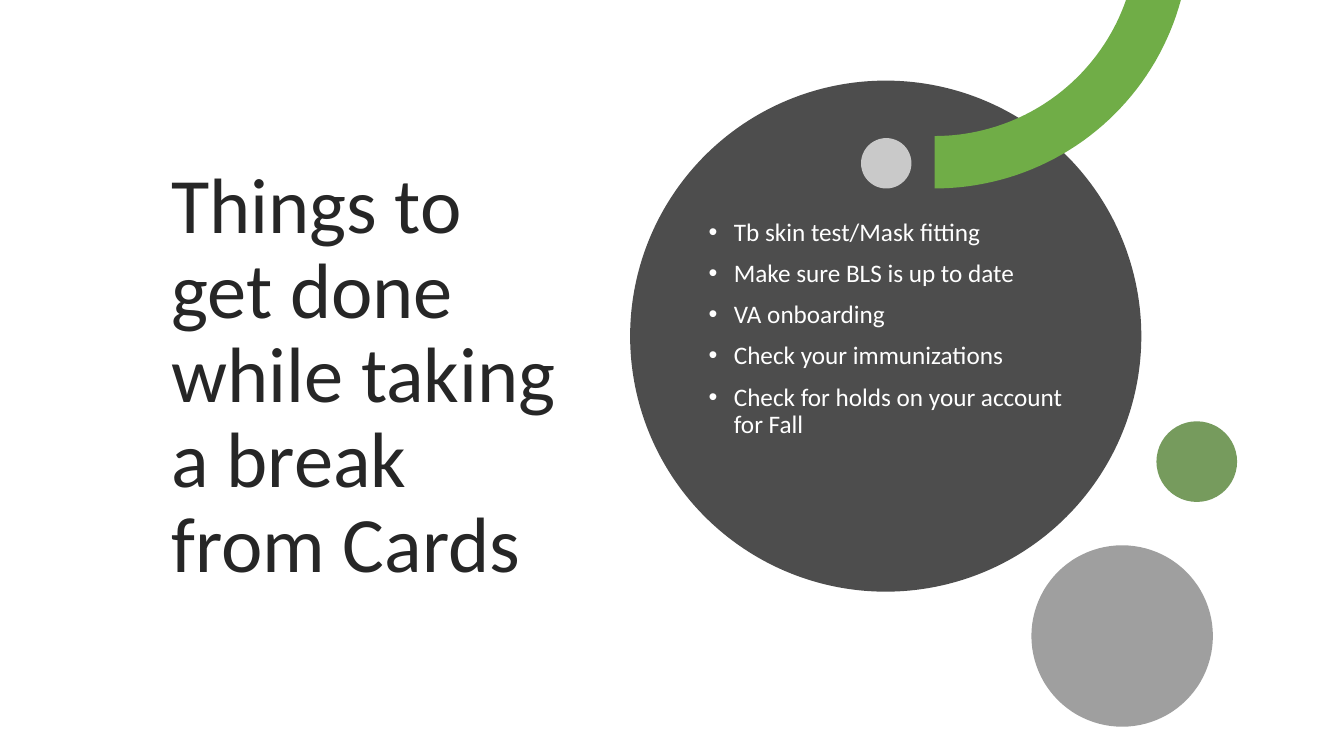
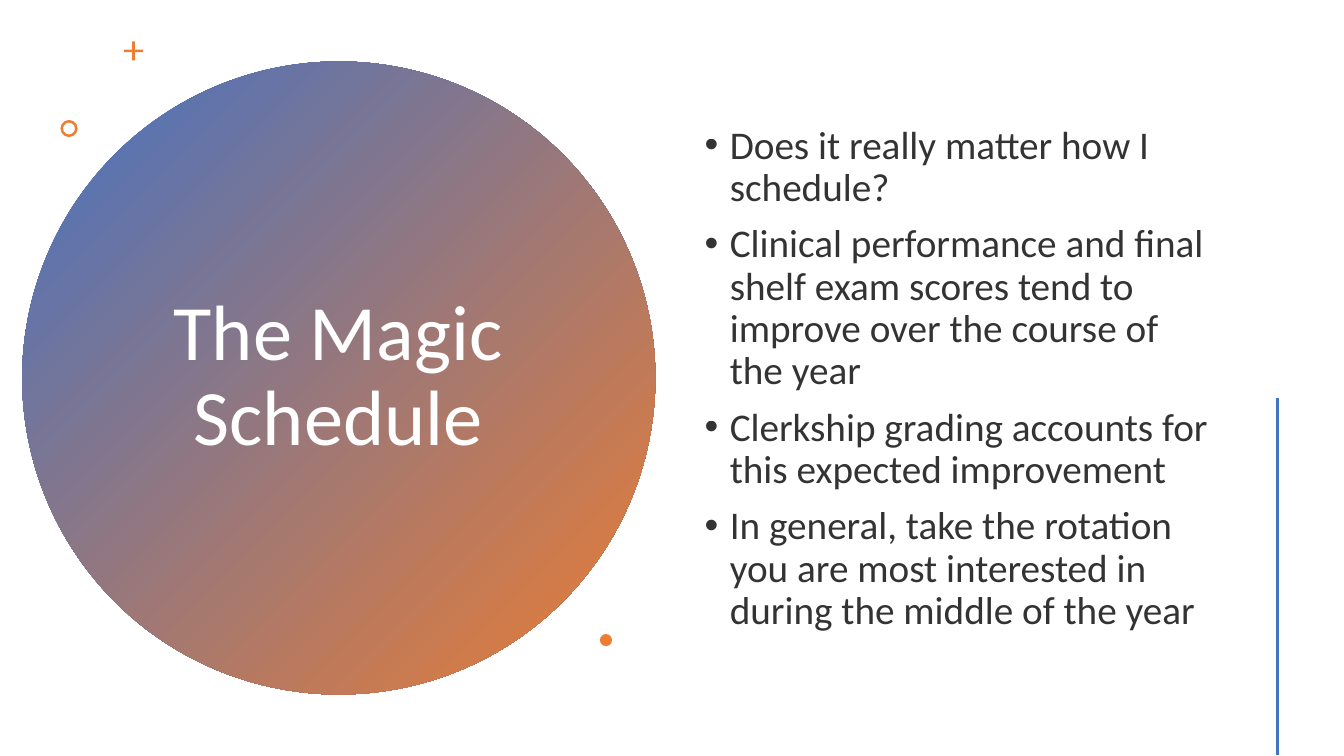
from math import asin, cos, pi, sin

from lxml.etree import SubElement
from pptx import Presentation
from pptx.dml.color import RGBColor
from pptx.enum.shapes import MSO_CONNECTOR as Link, MSO_SHAPE as Form
from pptx.enum.text import MSO_ANCHOR as Anchor, PP_ALIGN as Align
from pptx.oxml.ns import qn
from pptx.util import Inches, Pt

FONT = "Calibri"
WHITE, INK, BLACK = "FFFFFF", "262626", "000000"
DARK, GREY = "4D4D4D", "404040"
GREEN, MOSS = "70AD47", "548235"
BLUE, ORANGE = "4472C4", "ED7D31"

TASKS = [
    "Tb skin test/Mask fitting",
    "Make sure BLS is up to date",
    "VA onboarding",
    "Check your immunizations",
    "Check for holds on your account for Fall",
]
POINTS = [
    "Does it really matter how I schedule?",
    "Clinical performance and final shelf exam scores tend to improve over "
    "the course of the year",
    "Clerkship grading accounts for this expected improvement",
    "In general, take the rotation you are most interested in during the "
    "middle of the year",
]


def tint(fill, color, alpha=100):
    """Set a solid fill from a hex string, with opacity in percent."""
    fill.solid()
    fill.fore_color.rgb = RGBColor.from_string(color)
    if alpha < 100:
        # The private fill element is reached through its colour's XML.
        node = fill._xPr.find(qn("a:solidFill"))[0]
        SubElement(node, qn("a:alpha"), val=str(alpha * 1000))


def plain(shape):
    shape.shadow.inherit = False
    shape.line.fill.background()
    return shape


def add_form(slide, form, box, color, alpha=100):
    shape = plain(slide.shapes.add_shape(form, *map(Inches, box)))
    tint(shape.fill, color, alpha)
    return shape


def add_disc(slide, left, top, size, color, alpha=100):
    return add_form(slide, Form.OVAL, (left, top, size, size), color, alpha)


def add_text(slide, box, lines, size, color, alpha=100, align=Align.LEFT,
             bullet=False):
    frame = slide.shapes.add_textbox(*map(Inches, box)).text_frame
    frame.word_wrap = True
    frame.vertical_anchor = Anchor.MIDDLE
    for i, line in enumerate(lines):
        para = frame.paragraphs[0] if i == 0 else frame.add_paragraph()
        para.alignment = align
        para.line_spacing = 0.9
        if bullet:
            para.space_before = Pt(10)
            props = para._p.get_or_add_pPr()
            props.set("marL", str(Inches(0.25)))
            props.set("indent", str(Inches(-0.25)))
            SubElement(props, qn("a:buFont"), typeface="Arial")
            SubElement(props, qn("a:buChar"), char="•")
        run = para.add_run()
        run.text = line
        run.font.name = FONT
        run.font.size = Pt(size)
        tint(run.font.fill, color, alpha)


def add_title(slide, box, text, color, align=Align.LEFT):
    add_text(slide, box, [text], 56, color, align=align)


def add_list(slide, box, lines, size, color, alpha=100):
    add_text(slide, box, lines, size, color, alpha, bullet=True)


def add_band(slide, x, y, outer, inner, color, steps=40):
    """Draw the part of a ring round (x, y) from the slide's top edge down."""
    def arc(radius):
        start = asin(-y / radius)
        turns = [start + (pi / 2 - start) * i / steps
                 for i in range(steps + 1)]
        return [(Inches(x + radius * cos(t)), Inches(y + radius * sin(t)))
                for t in turns]

    dots = arc(outer) + arc(inner)[::-1]
    path = slide.shapes.build_freeform(*dots[0])
    path.add_line_segments(dots[1:], close=True)
    tint(plain(path.convert_to_shape()).fill, color)


def add_rule(slide, x, top, end, color):
    line = slide.shapes.add_connector(
        Link.STRAIGHT, Inches(x), Inches(top), Inches(x), Inches(end))
    line.line.color.rgb = RGBColor.from_string(color)
    line.line.width = Pt(2)
    SubElement(line._element.spPr, qn("a:effectLst"))


def add_orb(slide, left, top, size):
    orb = add_disc(slide, left, top, size, BLUE)
    orb.fill.gradient()
    orb.fill.gradient_angle = 315
    for stop, color in zip(orb.fill.gradient_stops, (BLUE, ORANGE)):
        stop.color.rgb = RGBColor.from_string(color)


def add_todo(slide):
    add_title(slide, (1.6, 1.19, 4.16, 5.11),
              "Things to get done while taking a break from Cards", INK)
    add_disc(slide, 6.25, 0.8, 5.07, DARK)
    add_disc(slide, 8.54, 1.37, 0.5, WHITE, 70)
    add_band(slide, 9.27, -0.66, 2.53, 2.01, GREEN)
    add_disc(slide, 11.47, 4.18, 0.8, MOSS, 80)
    add_disc(slide, 10.23, 5.41, 1.8, GREY, 50)
    add_list(slide, (6.93, 1.44, 3.92, 3.65), TASKS, 18, WHITE)


def add_magic(slide):
    add_orb(slide, 0.22, 0.61, 6.28)
    add_title(slide, (1.36, 1.41, 3.99, 4.67), "The Magic Schedule", WHITE,
              Align.CENTER)
    plus = add_form(slide, Form.CROSS, (1.23, 0.41, 0.19, 0.19), ORANGE)
    plus.adjustments[0] = 0.43
    ring = add_form(slide, Form.DONUT, (0.6, 1.19, 0.17, 0.17), ORANGE)
    ring.adjustments[0] = 0.15
    add_list(slide, (6.89, 0.57, 5.22, 6.38), POINTS, 28, BLACK, 80)
    add_disc(slide, 5.95, 6.29, 0.12, ORANGE)
    add_rule(slide, 12.67, 3.95, 7.49, BLUE)


def main():
    deck = Presentation()
    deck.slide_width, deck.slide_height = Inches(13.33), Inches(7.5)
    for build in (add_todo, add_magic):
        build(deck.slides.add_slide(deck.slide_layouts[6]))
    deck.save("out.pptx")


if __name__ == "__main__":
    main()
